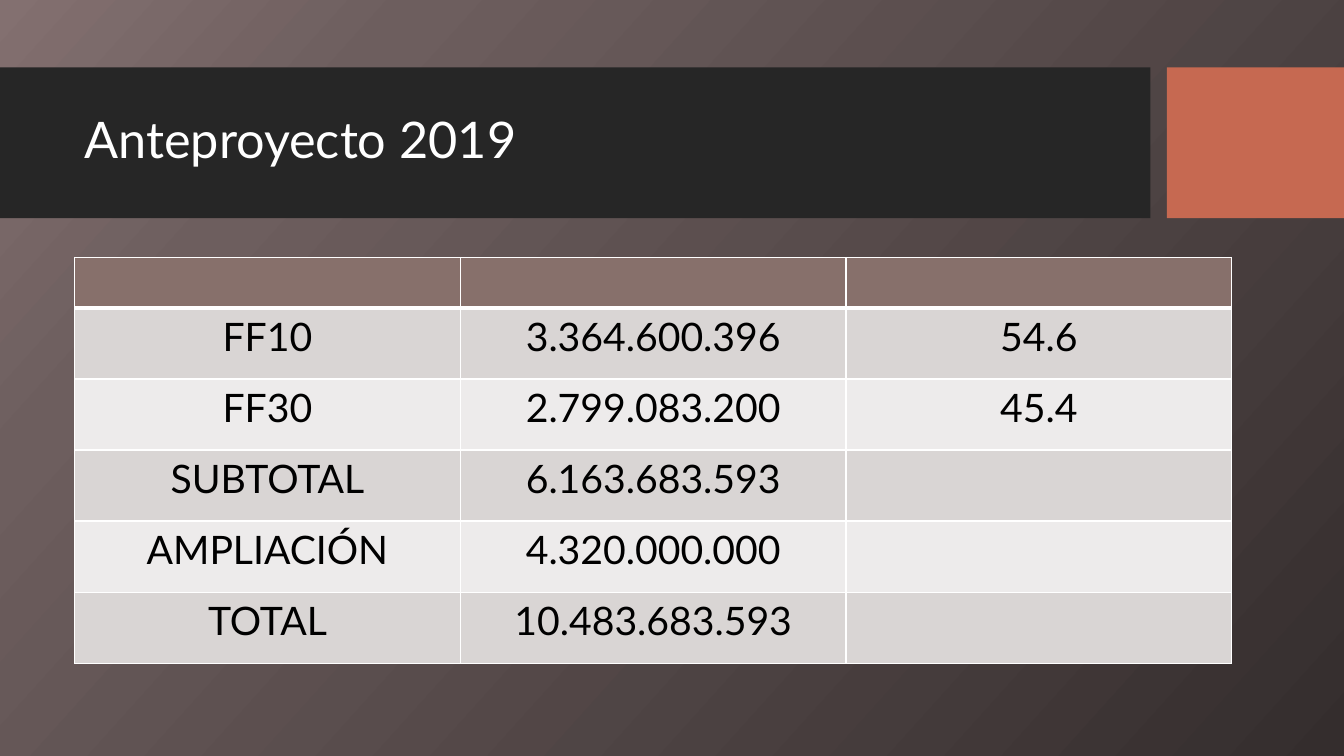
from copy import deepcopy

from pptx import Presentation
from pptx.dml.color import RGBColor
from pptx.enum.shapes import MSO_SHAPE
from pptx.enum.text import MSO_ANCHOR, PP_ALIGN
from pptx.oxml import parse_xml
from pptx.oxml.ns import nsdecls, qn
from pptx.util import Cm, Pt

COLORS = {
    "white": "FFFFFF", "black": "000000", "band": "262626", "accent": "C66951",
    "header": "87706B", "odd row": "D9D5D4", "even row": "EDEBEB",
}
BACKGROUND_STOPS = [(0, "837070"), (0.21, "6D5E5E"), (1, "342D2D")]
BUDGET_ROWS = [
    ("", "", ""),
    ("FF10", "3.364.600.396", "54.6"),
    ("FF30", "2.799.083.200", "45.4"),
    ("SUBTOTAL", "6.163.683.593", ""),
    ("AMPLIACIÓN", "4.320.000.000", ""),
    ("TOTAL", "10.483.683.593", ""),
]


def write_text(text_frame, text, size, color, align=PP_ALIGN.LEFT, line_spacing=1.0):
    paragraph = text_frame.paragraphs[0]
    paragraph.alignment = align
    paragraph.line_spacing = line_spacing
    run = paragraph.add_run()
    run.text = text
    run.font.name = "Lato"
    run.font.size = Pt(size)
    run.font.color.rgb = RGBColor.from_string(COLORS[color])


def set_borders(cell, top=1, bottom=1):
    """Draw white cell borders; top and bottom are widths in points."""
    properties = cell._tc.get_or_add_tcPr()
    for side, width in {"L": 1, "R": 1, "T": top, "B": bottom}.items():
        properties.append(parse_xml(
            f'<a:ln{side} {nsdecls("a")} w="{Pt(width)}"><a:solidFill>'
            f'<a:srgbClr val="{COLORS["white"]}"/></a:solidFill></a:ln{side}>'))


class SlideBuilder:
    def __init__(self, slide):
        self.slide = slide

    def background(self, stops, clockwise_angle):
        fill = self.slide.background.fill
        fill.gradient()
        fill.gradient_angle = 360 - clockwise_angle
        stop_list = next(self.slide.element.iter(qn("a:gsLst")))
        while len(stop_list) < len(stops):
            stop_list.append(deepcopy(stop_list[0]))
        for stop, (position, color) in zip(fill.gradient_stops, stops):
            stop.position = position
            stop.color.rgb = RGBColor.from_string(color)

    def rectangle(self, left, top, width, height, color):
        shape = self.slide.shapes.add_shape(
            MSO_SHAPE.RECTANGLE, Cm(left), Cm(top), Cm(width), Cm(height))
        shape.shadow.inherit = False
        shape.fill.solid()
        shape.fill.fore_color.rgb = RGBColor.from_string(COLORS[color])
        shape.line.fill.background()

    def title(self, left, top, width, height, text):
        box = self.slide.shapes.add_textbox(Cm(left), Cm(top), Cm(width), Cm(height))
        box.text_frame.word_wrap = True
        box.text_frame.vertical_anchor = MSO_ANCHOR.MIDDLE
        write_text(box.text_frame, text, size=36, color="white", line_spacing=0.9)

    def table(self, left, top, column_width, header_height, row_height, rows):
        heights = [header_height] + [row_height] * (len(rows) - 1)
        column_count = len(rows[0])
        table = self.slide.shapes.add_table(
            len(rows), column_count, Cm(left), Cm(top),
            Cm(column_width * column_count), Cm(sum(heights))).table
        table.horz_banding = False
        for column in table.columns:
            column.width = Cm(column_width)
        for index, values in enumerate(rows):
            table.rows[index].height = Cm(heights[index])
            fill = "header" if index == 0 else "odd row" if index % 2 else "even row"
            for cell, value in zip(table.rows[index].cells, values):
                set_borders(cell, top=3 if index == 1 else 1,
                            bottom=3 if index == 0 else 1)
                cell.fill.solid()
                cell.fill.fore_color.rgb = RGBColor.from_string(COLORS[fill])
                if value:
                    write_text(cell.text_frame, value, size=28, color="black",
                               align=PP_ALIGN.CENTER)


def main():
    presentation = Presentation()
    presentation.slide_width = Cm(33.87)
    presentation.slide_height = Cm(19.05)
    builder = SlideBuilder(presentation.slides.add_slide(presentation.slide_layouts[6]))
    builder.background(BACKGROUND_STOPS, clockwise_angle=42)
    builder.rectangle(0, 1.7, 28.99, 3.8, "band")
    builder.rectangle(29.41, 1.7, 4.46, 3.8, "accent")
    builder.title(1.88, 2.08, 26.7, 3, "Anteproyecto 2019")
    builder.table(1.88, 6.49, column_width=9.72, header_height=1.27,
                  row_height=1.79, rows=BUDGET_ROWS)
    presentation.save("out.pptx")


if __name__ == "__main__":
    main()
